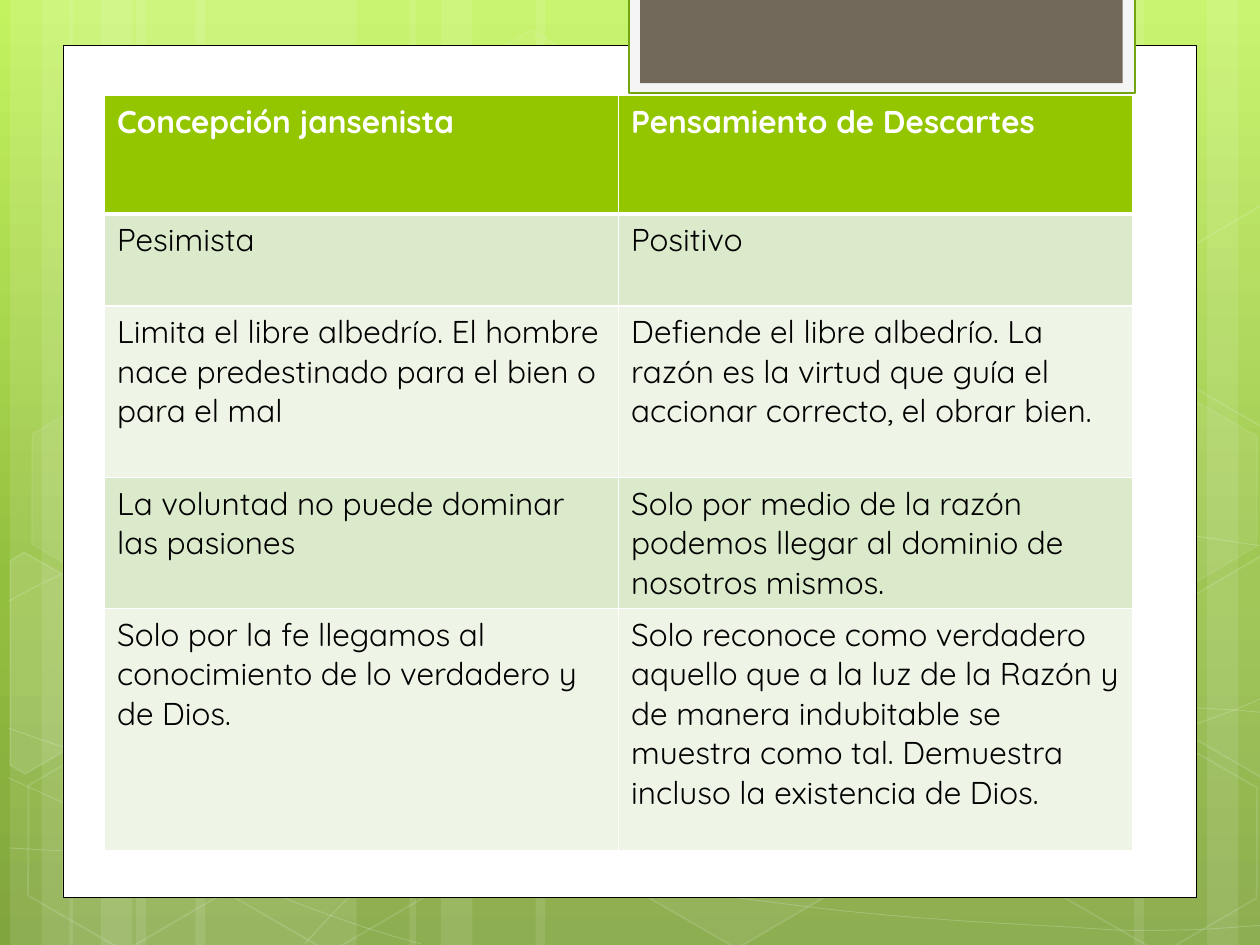
from collections import namedtuple
from copy import deepcopy
from math import cos, radians, sin

from lxml.etree import SubElement
from pptx import Presentation
from pptx.dml.color import RGBColor
from pptx.enum.shapes import MSO_SHAPE
from pptx.oxml.ns import qn
from pptx.util import Inches, Pt

# The slide is a grid of 10 columns by 7.5 rows, each cell one inch square.
Box = namedtuple("Box", "left top width height")
SLIDE = Box(0, 0, 10, 7.5)
PANEL = Box(0.5, 0.36, 9, 6.76)
TAB = Box(4.99, -0.02, 4.02, 0.76)
TABLE = Box(0.83, 0.76, 8.16, 5.99)

FONT = "Quicksand"
COLORS = {
    "sky": "C3F35F", "leaf": "93BF3F", "moss": "81A53E",
    "white": "FFFFFF", "black": "000000",
    "tab_frame": "F5F5F5", "tab_line": "74A510", "tab": "71685A",
    "header": "94C600", "band_dark": "DCEACC", "band_light": "EEF5E7",
}
STRIPE_GROUP = [(1.08, 1.75), (0.08, 0.5), (0.33, 0.83)]
STRIPES = (
    [(left + shift, width) for shift in (0, 0.47) for left, width in STRIPE_GROUP]
    + [(7.33, 1.75), (9.58, 0.5), (9, 0.83), (4.25, 3.08), (3.25, 0.5), (3.5, 0.83)]
)
# Each curve: a start point, then Bezier pieces of two controls and an end.
CURVES = [
    [(0.07, 6.73), (0.61, 6.76), (1.15, 6.79), (1.9, 6.78), (2.65, 6.77), (3.58, 6.75),
     (4.58, 6.65), (5.58, 6.55), (7, 6.36), (7.92, 6.17), (8.83, 5.98), (9.77, 5.68),
     (10.07, 5.51)],
    [(0.07, 4.77), (0.36, 4.61), (0.65, 4.46), (1.21, 4.31), (1.78, 4.16), (2.59, 3.94),
     (3.47, 3.87), (4.36, 3.8), (5.44, 3.79), (6.54, 3.87), (7.64, 3.95), (9.47, 4.26),
     (10.07, 4.34)],
    [(0.06, 6.17), (1.27, 6.72), (2.47, 7.27), (3.34, 7.49)],
    [(0.07, 5.78), (0.38, 5.89), (0.7, 6), (1.28, 6.16), (1.86, 6.31), (2.73, 6.56),
     (3.57, 6.73), (4.4, 6.9), (5.45, 7.08), (6.28, 7.18), (7.11, 7.29), (8, 7.33),
     (8.53, 7.36), (9.05, 7.4), (9.19, 7.38), (9.45, 7.38), (9.71, 7.37), (9.89, 7.35),
     (10.07, 7.34)],
    [(2.42, 7.49), (2.6, 7.29), (2.78, 7.09), (3.02, 6.91), (3.26, 6.73), (3.6, 6.53),
     (3.88, 6.39), (4.16, 6.25), (4.33, 6.19), (4.7, 6.09), (5.06, 5.99), (5.73, 5.85),
     (6.08, 5.78), (6.44, 5.71), (6.49, 5.71), (6.8, 5.69), (7.11, 5.66), (7.6, 5.63),
     (7.94, 5.62), (8.29, 5.61), (8.86, 5.62), (8.86, 5.62), (9.08, 5.62), (9.31, 5.62),
     (9.53, 5.62), (9.71, 5.63), (9.88, 5.64), (9.97, 5.65), (10.06, 5.66), (10.03, 5.65),
     (10.06, 5.66)],
]
TILT = 30
# Left, top, fill opacity and line opacity in percent.
HEXAGONS = [
    (3.34, 0.36, 4, 8), (4.97, 5.89, 6, 12), (0.11, 5.91, 0, 12), (0.14, 3.12, 7, 8),
    (1.74, 5.92, 0, 12), (7.53, 4.53, 10, 12), (8.34, 5.93, 0, 12), (8.34, 3.14, 7, 8),
]
# Hexagons cut by the slide edge: tilted outline, centre and fill opacity.
CUT_HEXAGONS = [
    ([(0.08, 4.45), (0.19, 4.38), (0.96, 4.82), (0.95, 5.7), (0.2, 6.14), (0.08, 6.07)],
     (0.36, 5.35), 10),
    ([(9.26, 4.85), (10.01, 4.41), (10.09, 4.46), (10.09, 6.13), (10.02, 6.17), (9.26, 5.73)],
     (9.85, 5.2), 4),
    ([(9.26, 2.07), (10.01, 1.63), (10.1, 1.68), (10.09, 3.35), (10.02, 3.39), (9.26, 2.95)],
     (9.85, 2.41), 0),
]
ROW_HEIGHTS = [0.94, 0.73, 1.36, 1.04, 1.92]
ROWS = [
    ("Concepción jansenista", "Pensamiento de Descartes"),
    ("Pesimista", "Positivo"),
    ("Limita el libre albedrío. El hombre nace predestinado para el bien o para el mal",
     "Defiende el libre albedrío. La razón es la virtud que guía el accionar correcto, "
     "el obrar bien."),
    ("La voluntad no puede dominar las pasiones",
     "Solo por medio de la razón podemos llegar al dominio de nosotros mismos."),
    ("Solo por la fe llegamos al conocimiento de lo verdadero y de Dios.",
     "Solo reconoce como verdadero aquello que a la luz de la Razón y de manera "
     "indubitable se muestra como tal. Demuestra incluso la existencia de Dios."),
]


def color(name):
    return RGBColor.from_string(COLORS[name])


def set_solid(fill, element, name, opacity):
    """Fill with a colour at an opacity in percent; zero means no fill."""
    if not opacity:
        fill.background()
        return
    fill.solid()
    fill.fore_color.rgb = color(name)
    if opacity < 100:
        rgb = element.find(qn("a:solidFill")).find(qn("a:srgbClr"))
        SubElement(rgb, qn("a:alpha"), val=str(opacity * 1000))


def style(shape, fill="white", opacity=100, line=None, width=1, line_opacity=100):
    shape.shadow.inherit = False
    properties = shape._element.spPr
    set_solid(shape.fill, properties, fill, opacity)
    if line is None:
        shape.line.fill.background()
        return
    shape.line.width = Pt(width)
    set_solid(shape.line.fill, properties.find(qn("a:ln")), line, line_opacity)


def add_preset(slide, kind, box, **look):
    shape = slide.shapes.add_shape(kind, *(Inches(length) for length in box))
    style(shape, **look)
    return shape


def add_outline(slide, box, points, close, **look):
    corners = [(Inches(box.left + x), Inches(box.top + y)) for x, y in points]
    builder = slide.shapes.build_freeform(*corners[0])
    builder.add_line_segments(corners[1:], close=close)
    shape = builder.convert_to_shape()
    style(shape, **look)
    return shape


def bend(shape):
    """Turn each three line segments into one cubic Bezier piece."""
    segments = list(shape._element.iter(qn("a:lnTo")))
    for first in range(0, len(segments), 3):
        piece = segments[first:first + 3]
        curve = SubElement(piece[0].getparent(), qn("a:cubicBezTo"))
        for segment in piece:
            curve.append(segment[0])
            segment.getparent().remove(segment)


def untilt(point, centre):
    x, y = point[0] - centre[0], point[1] - centre[1]
    cosine, sine = cos(radians(TILT)), sin(radians(TILT))
    return centre[0] + x * cosine + y * sine, centre[1] - x * sine + y * cosine


def set_background(slide):
    fill = slide.background.fill
    fill.gradient()
    fill.gradient_angle = 270
    first = slide._element.find(".//" + qn("a:gs"))
    first.addnext(deepcopy(first))
    for stop, name, position in zip(fill.gradient_stops, ("sky", "leaf", "moss"), (0, 0.62, 1)):
        stop.color.rgb = color(name)
        stop.position = position


def add_backdrop(slide, box):
    for left, width in STRIPES:
        stripe = Box(box.left + left, box.top, width, box.height)
        add_preset(slide, MSO_SHAPE.RECTANGLE, stripe, opacity=10)
    for nodes in CURVES:
        bend(add_outline(slide, box, nodes, False,
                         opacity=0, line="white", width=0.5, line_opacity=20))
    for left, top, opacity, line_opacity in HEXAGONS:
        place = Box(box.left + left, box.top + top, 1.75, 1.52)
        hexagon = add_preset(slide, MSO_SHAPE.HEXAGON, place, opacity=opacity,
                             line="white", line_opacity=line_opacity)
        hexagon.adjustments[0], hexagon.adjustments[1] = 0.285, 1.155
        hexagon.rotation = TILT
    for points, centre, opacity in CUT_HEXAGONS:
        upright = [untilt(point, centre) for point in points]
        add_outline(slide, box, upright, True, opacity=opacity,
                    line="white", line_opacity=12).rotation = TILT


def add_tab(slide, box):
    add_preset(slide, MSO_SHAPE.RECTANGLE, box, fill="tab_frame", line="tab_line", width=1.25)
    inner = Box(box.left + 0.09, box.top, box.width - 0.19, box.height - 0.08)
    add_preset(slide, MSO_SHAPE.RECTANGLE, inner, fill="tab")


def set_borders(cell, widths):
    properties = cell._tc.get_or_add_tcPr()
    for index, (side, width) in enumerate(widths.items()):
        line = SubElement(properties, qn("a:ln" + side), w=str(Pt(width)))
        SubElement(SubElement(line, qn("a:solidFill")), qn("a:srgbClr"), val=COLORS["white"])
        properties.insert(index, line)


def add_comparison(slide, box):
    frame = slide.shapes.add_table(len(ROWS), len(ROWS[0]), *(Inches(length) for length in box))
    for index, (row, texts) in enumerate(zip(frame.table.rows, ROWS)):
        row.height = Inches(box.height * ROW_HEIGHTS[index] / sum(ROW_HEIGHTS))
        header = index == 0
        band = "header" if header else "band_dark" if index % 2 else "band_light"
        for cell, text in zip(row.cells, texts):
            cell.text_frame.text = text
            font = cell.text_frame.paragraphs[0].runs[0].font
            font.name, font.size, font.bold = FONT, Pt(18), header
            font.color.rgb = color("white" if header else "black")
            cell.fill.solid()
            cell.fill.fore_color.rgb = color(band)
            set_borders(cell, {"L": 1, "R": 1, "T": 3 if index == 1 else 1,
                               "B": 3 if header else 1})


presentation = Presentation()
presentation.slide_width, presentation.slide_height = Inches(SLIDE.width), Inches(SLIDE.height)
slide = presentation.slides.add_slide(presentation.slide_layouts[6])
set_background(slide)
add_backdrop(slide, SLIDE)
add_preset(slide, MSO_SHAPE.RECTANGLE, PANEL, line="black", width=0.5)
add_tab(slide, TAB)
add_comparison(slide, TABLE)
presentation.save("out.pptx")
